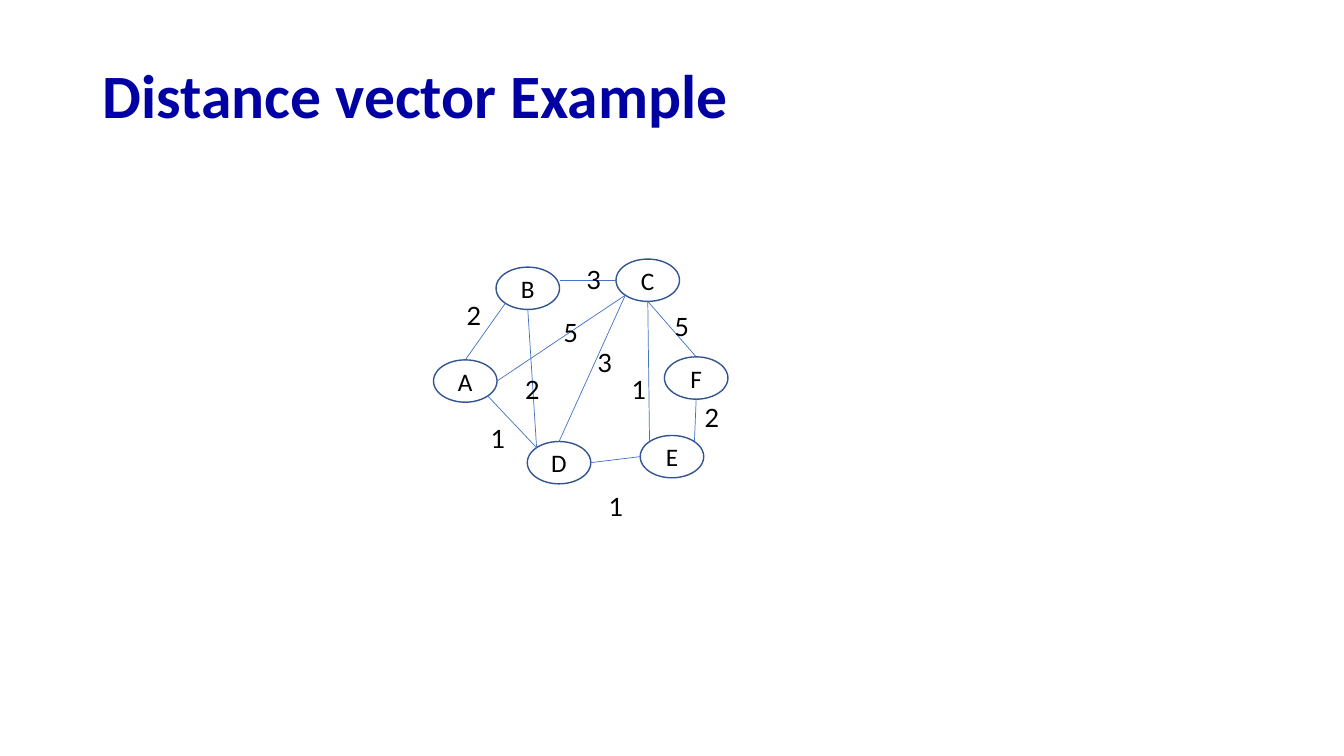
from pptx import Presentation, util as u
from pptx.dml.color import RGBColor
from pptx.enum import shapes, text
from pptx.oxml.ns import qn
from lxml import etree

COLORS = {"title": "0000A3", "outline": "325491", "edge": "4472C4", "ink": "000000"}
CELL = u.Inches(0.01)
NODE_W, NODE_H = 63, 42
LABEL_W, LABEL_H = 34, 40

nodes = {"A": (430, 357), "B": (492, 265), "C": (611, 257),
         "F": (659, 354), "D": (523, 438), "E": (635, 432)}
diag = 0.5 ** 0.5
sites = {"top": (0, -1), "left": (-1, 0), "bottom": (0, 1), "right": (1, 0),
         "top left": (-diag, -diag), "top right": (diag, -diag),
         "bottom left": (-diag, diag), "bottom right": (diag, diag),
         "level with C": (1, -0.38)}
edges = [("C", "left", "B", "level with C"), ("B", "bottom left", "A", "top"),
         ("A", "bottom right", "D", "top left"), ("D", "right", "E", "left"),
         ("F", "bottom", "E", "top right"), ("F", "top", "C", "bottom"),
         ("C", "bottom", "E", "top left"), ("C", "bottom left", "D", "top"),
         ("C", "bottom left", "A", "right"), ("B", "bottom", "D", "top left")]
costs = [("3", 572, 257), ("5", 659, 304), ("2", 453, 293), ("5", 549, 310),
         ("3", 583, 340), ("1", 617, 366), ("1", 594, 483), ("2", 689, 394),
         ("1", 477, 415), ("2", 511, 366)]


def site_point(node, site):
    x, y = nodes[node]
    dx, dy = sites[site]
    return (round((x + NODE_W / 2 * (1 + dx)) * CELL),
            round((y + NODE_H / 2 * (1 + dy)) * CELL))


def write(sp, words, color, frame, para, font):
    tf = sp.text_frame
    tf.text = words
    p = tf.paragraphs[0]
    r = p.runs[0]
    for target, values in ((tf, frame), (p, para), (r.font, font)):
        for name, value in values.items():
            setattr(target, name, value)
    r.font.color.rgb = RGBColor.from_string(COLORS[color])


prs = Presentation()
prs.slide_width, prs.slide_height = u.Inches(13.33), u.Inches(7.5)
s = prs.slides.add_slide(prs.slide_layouts[5])

sp = s.shapes.title
sp.left, sp.top, sp.width, sp.height = [n * CELL for n in (92, 49, 1150, 98)]
write(sp, "Distance vector Example", "title",
      {"vertical_anchor": text.MSO_ANCHOR.MIDDLE, "auto_size": text.MSO_AUTO_SIZE.NONE},
      {"alignment": text.PP_ALIGN.LEFT, "line_spacing": 0.9},
      {"name": "Calibri", "size": u.Pt(44), "bold": True})

for name, (x, y) in nodes.items():
    sp = s.shapes.add_shape(shapes.MSO_SHAPE.OVAL, x * CELL, y * CELL,
                            NODE_W * CELL, NODE_H * CELL)
    sp.shadow.inherit = False
    sp.fill.background()
    sp.line.color.rgb = RGBColor.from_string(COLORS["outline"])
    sp.line.width = u.Pt(1)
    write(sp, name, "ink", {"vertical_anchor": text.MSO_ANCHOR.MIDDLE},
          {"alignment": text.PP_ALIGN.CENTER}, {"name": "Calibri", "size": u.Pt(18)})

for start, start_site, end, end_site in edges:
    cx = s.shapes.add_connector(shapes.MSO_CONNECTOR.STRAIGHT,
                                *site_point(start, start_site),
                                *site_point(end, end_site))
    cx.line.color.rgb = RGBColor.from_string(COLORS["edge"])
    cx.line.width = u.Pt(0.5)
    etree.SubElement(cx._element.spPr, qn("a:effectLst"))

for cost, x, y in costs:
    sp = s.shapes.add_textbox(x * CELL, y * CELL, LABEL_W * CELL, LABEL_H * CELL)
    write(sp, cost, "ink",
          {"word_wrap": False, "auto_size": text.MSO_AUTO_SIZE.SHAPE_TO_FIT_TEXT},
          {"alignment": text.PP_ALIGN.LEFT}, {"name": "Lato", "size": u.Pt(18)})

prs.save("out.pptx")
